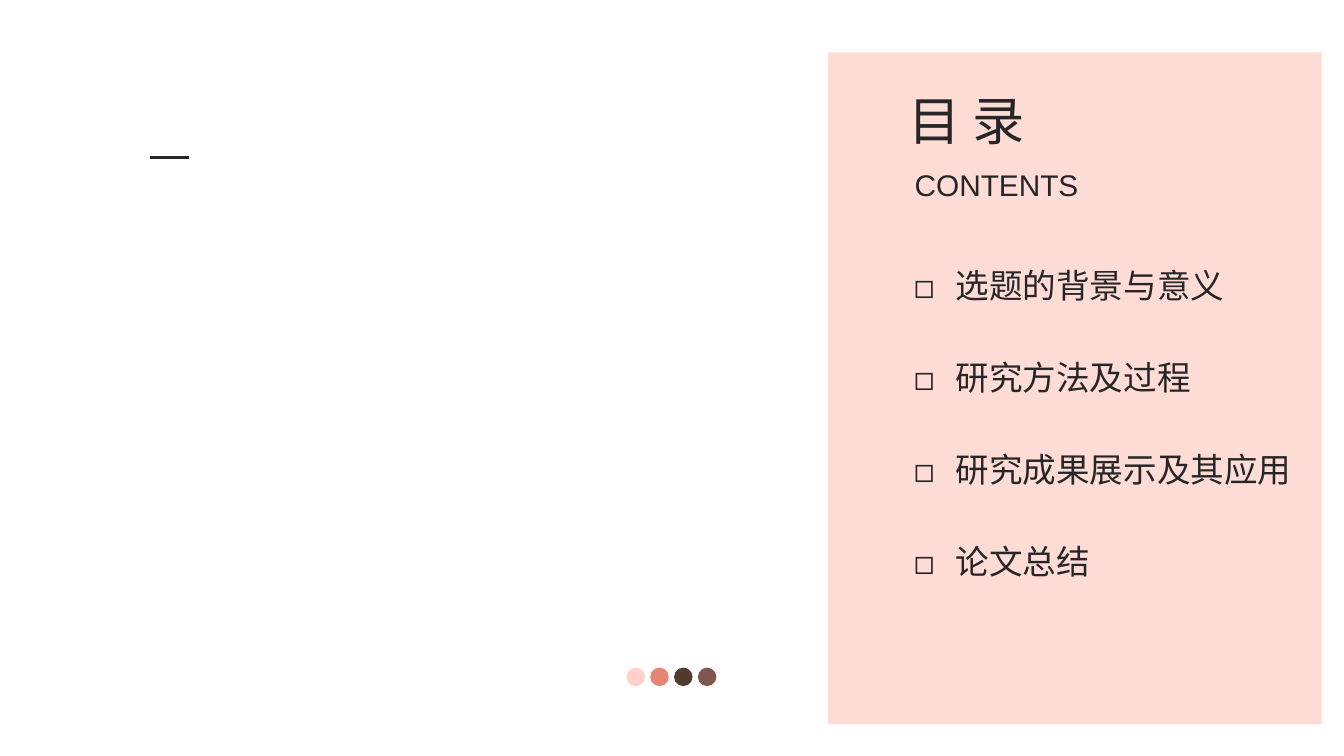
"""Build the contents slide of a thesis presentation."""
from lxml.etree import SubElement
from pptx import Presentation
from pptx.dml.color import RGBColor
from pptx.enum.shapes import MSO_CONNECTOR as Connector, MSO_SHAPE as Shape
from pptx.enum.text import MSO_ANCHOR as Anchor, MSO_AUTO_SIZE as AutoSize, PP_ALIGN as Align
from pptx.oxml.ns import qn
from pptx.util import Cm, Pt

INK = RGBColor(0x26, 0x26, 0x26)
PINK = RGBColor(0xFF, 0xD1, 0xC9)
CORAL = RGBColor(0xE8, 0x85, 0x72)
BROWN = RGBColor(0x52, 0x3A, 0x2D)
MAUVE = RGBColor(0x7F, 0x57, 0x50)
CJK_FONT = "Noto Sans CJK SC"
TOPICS = ["选题的背景与意义", "研究方法及过程", "研究成果展示及其应用", "论文总结"]


class ContentsSlide:
    """Hold the slide and the style of its elements."""

    def __init__(self, deck):
        self.page = deck.slides.add_slide(deck.slide_layouts[5])
        self.shapes = self.page.shapes

    def filled(self, shapes, kind, place, color, opacity=100):
        shape = shapes.add_shape(kind, *map(Cm, place))
        shape.shadow.inherit = False
        shape.fill.solid()
        shape.fill.fore_color.rgb = color
        shape.line.fill.background()
        if opacity < 100:
            tint = shape._element.spPr.find(".//" + qn("a:srgbClr"))
            SubElement(tint, qn("a:alpha"), val=str(opacity * 1000))
        return shape

    def dots(self, left, top, size, pitch, colors):
        group = self.shapes.add_group_shape()
        for index, color in enumerate(colors):
            place = (left + index * pitch, top, size, size)
            self.filled(group.shapes, Shape.OVAL, place, color)

    def rule(self, left, right, top):
        line = self.shapes.add_connector(Connector.STRAIGHT, Cm(left), Cm(top), Cm(right), Cm(top))
        line.line.color.rgb = INK
        line.line.width = Pt(1.5)
        SubElement(line._element.spPr, qn("a:effectLst"))

    def set_text(self, box, text, size, font, align=Align.LEFT, wrap=False):
        frame = box.text_frame
        frame.text = text
        frame.word_wrap = wrap
        frame.auto_size = AutoSize.SHAPE_TO_FIT_TEXT
        frame.vertical_anchor = Anchor.TOP
        para = frame.paragraphs[0]
        para.alignment = align
        span = para.runs[0]
        span.font.size = Pt(size)
        span.font.name = font
        span.font.color.rgb = INK
        SubElement(span._r.get_or_add_rPr(), qn("a:ea"), typeface=CJK_FONT)
        return para

    def title(self, place, text):
        box = self.shapes.title
        box.left, box.top, box.width, box.height = map(Cm, place)
        self.shapes._spTree.append(box._element)
        self.set_text(box, text, 28, "Calibri", Align.CENTER)

    def label(self, place, text):
        box = self.shapes.add_textbox(*map(Cm, place))
        self.set_text(box, text, 16, "Arial", Align.CENTER)

    def topic(self, place, text):
        box = self.shapes.add_textbox(*map(Cm, place))
        para = self.set_text(box, text, 18, CJK_FONT, wrap=True)
        props = para._p.get_or_add_pPr()
        props.set("marL", str(Cm(0.79)))
        props.set("indent", str(-Cm(0.79)))
        SubElement(props, qn("a:buFont"), typeface=CJK_FONT)
        SubElement(props, qn("a:buChar"), char="◻")


def main():
    deck = Presentation()
    deck.slide_width, deck.slide_height = Cm(25.4), Cm(14.29)
    slide = ContentsSlide(deck)
    slide.filled(slide.shapes, Shape.RECTANGLE, (15.65, 0.99, 9.33, 12.7), PINK, opacity=75)
    slide.dots(11.84, 12.62, 0.35, 0.45, [PINK, CORAL, BROWN, MAUVE])
    slide.label((17.02, 3.02, 3.63, 0.94), "CONTENTS")
    slide.rule(2.84, 3.58, 2.97)
    slide.title((16.89, 1.55, 2.74, 1.45), "目 录")
    for index, text in enumerate(TOPICS):
        slide.topic((17.02, 4.88 + index * 1.74, 7.95, 1.02), text)
    deck.save("out.pptx")


if __name__ == "__main__":
    main()
